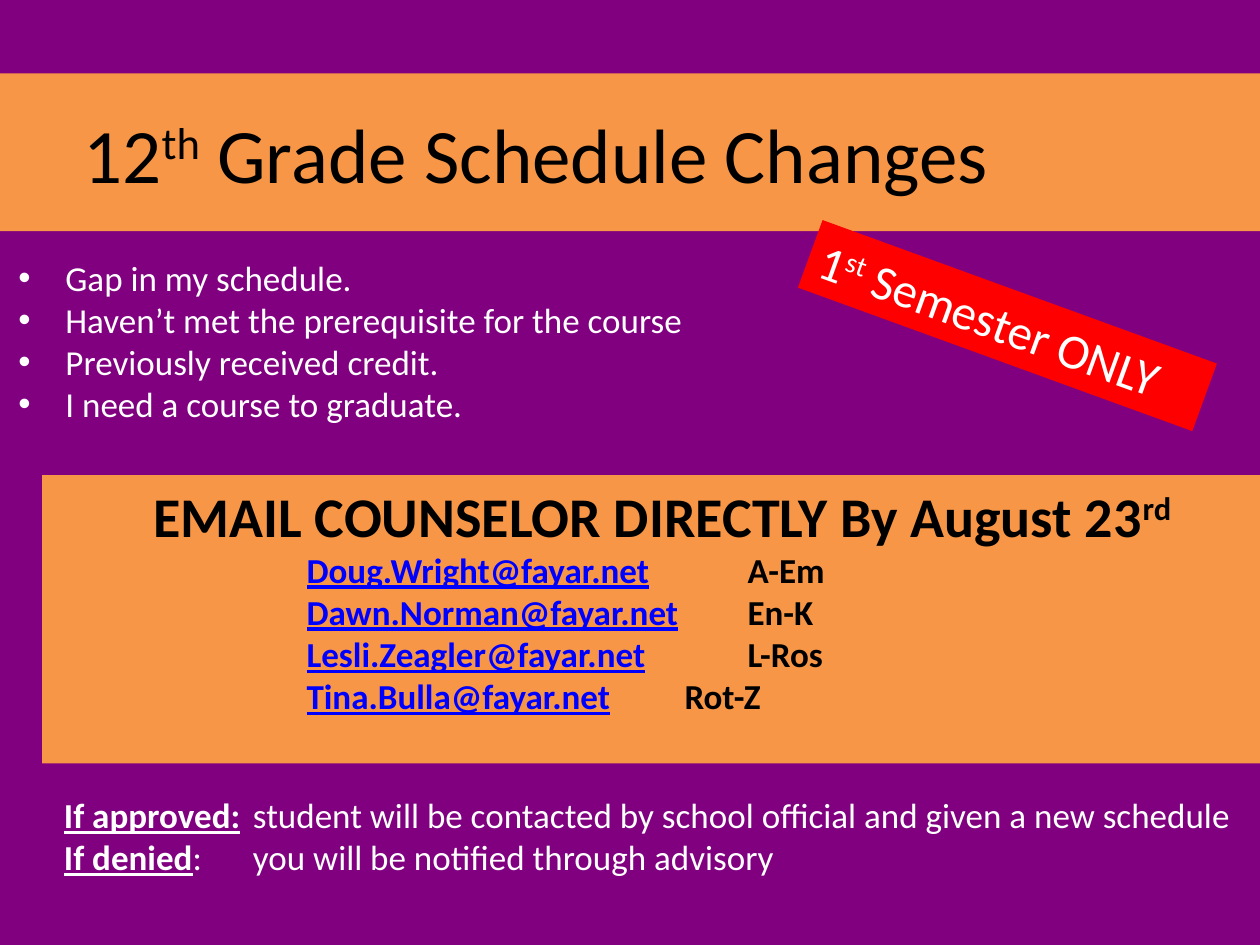
from lxml import etree
from pptx import Presentation
from pptx.dml.color import RGBColor
from pptx.enum.shapes import MSO_SHAPE as Shape
from pptx.enum.text import MSO_ANCHOR as Anchor, MSO_AUTO_SIZE as Auto, PP_ALIGN as Align
from pptx.oxml.ns import qn
from pptx.util import Cm, Pt

PURPLE, ORANGE, RED = "800080", "F79646", "FF0000"
BLACK, WHITE, BLUE = "000000", "FFFFFF", "0000FF"


def rgb(value):
    return RGBColor.from_string(value)


class Deck:
    """Hold the style and the current slide."""

    def __init__(self, font, background):
        self.font = font
        self.prs = Presentation()
        self.prs.slide_width, self.prs.slide_height = Cm(25.4), Cm(19.05)
        self.s = self.prs.slides.add_slide(self.prs.slide_layouts[5])
        self.fill(self.s.background, background)

    def fill(self, target, fill):
        target.fill.solid()
        target.fill.fore_color.rgb = rgb(fill)

    def frame(self, sp, anchor=Anchor.TOP):
        values = {"word_wrap": True, "auto_size": Auto.NONE, "vertical_anchor": anchor}
        for name, value in values.items():
            setattr(sp.text_frame, name, value)
        return sp.text_frame

    def title(self, box, fill, runs, **style):
        sp = self.s.shapes.title
        for name, value in zip(("left", "top", "width", "height"), box):
            setattr(sp, name, Cm(value))
        self.fill(sp, fill)
        self.paragraph(self.frame(sp, Anchor.MIDDLE), runs, align=Align.CENTER, **style)

    def panel(self, box, fill, rotation=0):
        sp = self.s.shapes.add_shape(Shape.RECTANGLE, *map(Cm, box))
        sp.shadow.inherit = False
        sp.rotation = rotation
        self.fill(sp, fill)
        sp.line.fill.background()
        return self.frame(sp)

    def textbox(self, box):
        return self.frame(self.s.shapes.add_textbox(*map(Cm, box)))

    def paragraph(self, tf, runs, align=Align.LEFT, margin=0, bullet=None, tab=None, **style):
        p = tf.paragraphs[0] if not tf.paragraphs[0].runs else tf.add_paragraph()
        p.alignment = align
        pPr = p._p.get_or_add_pPr()
        pPr.set("marL", str(Cm(margin)))
        pPr.set("indent", str(-Cm(margin) if bullet else 0))
        if bullet:
            etree.SubElement(pPr, qn("a:buFont"), typeface="Arial")
            etree.SubElement(pPr, qn("a:buChar"), char=bullet)
        if tab:
            tabs = etree.SubElement(pPr, qn("a:tabLst"))
            etree.SubElement(tabs, qn("a:tab"), pos=str(Cm(tab)), algn="l")
        for text, extra in runs:
            self.run(p, text, {**style, **extra})

    def run(self, p, text, style):
        r = p.add_run()
        r.text = text
        values = {"name": self.font, "bold": False, **style}
        r.font.color.rgb = rgb(values.pop("color"))
        if values.pop("raised", False):
            r._r.get_or_add_rPr().set("baseline", "30000")
        values["size"] = Pt(values["size"])
        for name, value in values.items():
            setattr(r.font, name, value)


def main():
    deck = Deck("Calibri", PURPLE)
    raised = {"raised": True}
    label = {"bold": True, "underline": True}

    deck.title((-5.28, 1.48, 32.18, 3.18), ORANGE,
               [("12", {}), ("th", raised), (" Grade Schedule Changes", {})],
               size=44, color=BLACK)

    tf = deck.panel((0.85, 9.58, 25.15, 5.81), ORANGE)
    deck.paragraph(tf, [("EMAIL COUNSELOR DIRECTLY By August 23", {}), ("rd ", raised)],
                   align=Align.CENTER, size=32, color=BLACK, bold=True)
    counselors = {
        "Doug.Wright@fayar.net": "A-Em",
        "Dawn.Norman@fayar.net": "En-K",
        "Lesli.Zeagler@fayar.net": "L-Ros",
        "Tina.Bulla@fayar.net": "Rot-Z",
    }
    for email, names in counselors.items():
        deck.paragraph(tf, [(email, {"color": BLUE, "underline": True}), (f"\t\t{names}", {})],
                       margin=5.08, size=20, color=BLACK, bold=True)

    tf = deck.textbox((0.12, 5.05, 25.83, 3.68))
    for reason in ("Gap in my schedule.", "Haven’t met the prerequisite for the course",
                   "Previously received credit.", "I need a course to graduate."):
        deck.paragraph(tf, [(reason, {})], margin=0.95, bullet="•", size=20, color=WHITE)

    tf = deck.textbox((1.04, 15.88, 24.77, 1.96))
    outcomes = (
        ("If approved:", "\tstudent will be contacted by school official and given a new schedule", 4.04),
        ("If denied", ":\tyou will be notified through advisory", 3.1),
    )
    for name, result, tab in outcomes:
        deck.paragraph(tf, [(name, label), (result, {})], tab=tab, size=20, color=WHITE)

    tf = deck.panel((16.08, 5.84, 8.46, 1.45), RED, rotation=20)
    deck.paragraph(tf, [("1", {}), ("st", raised), (" Semester ONLY", {})], size=28, color=WHITE)

    deck.prs.save("out.pptx")


if __name__ == "__main__":
    main()
